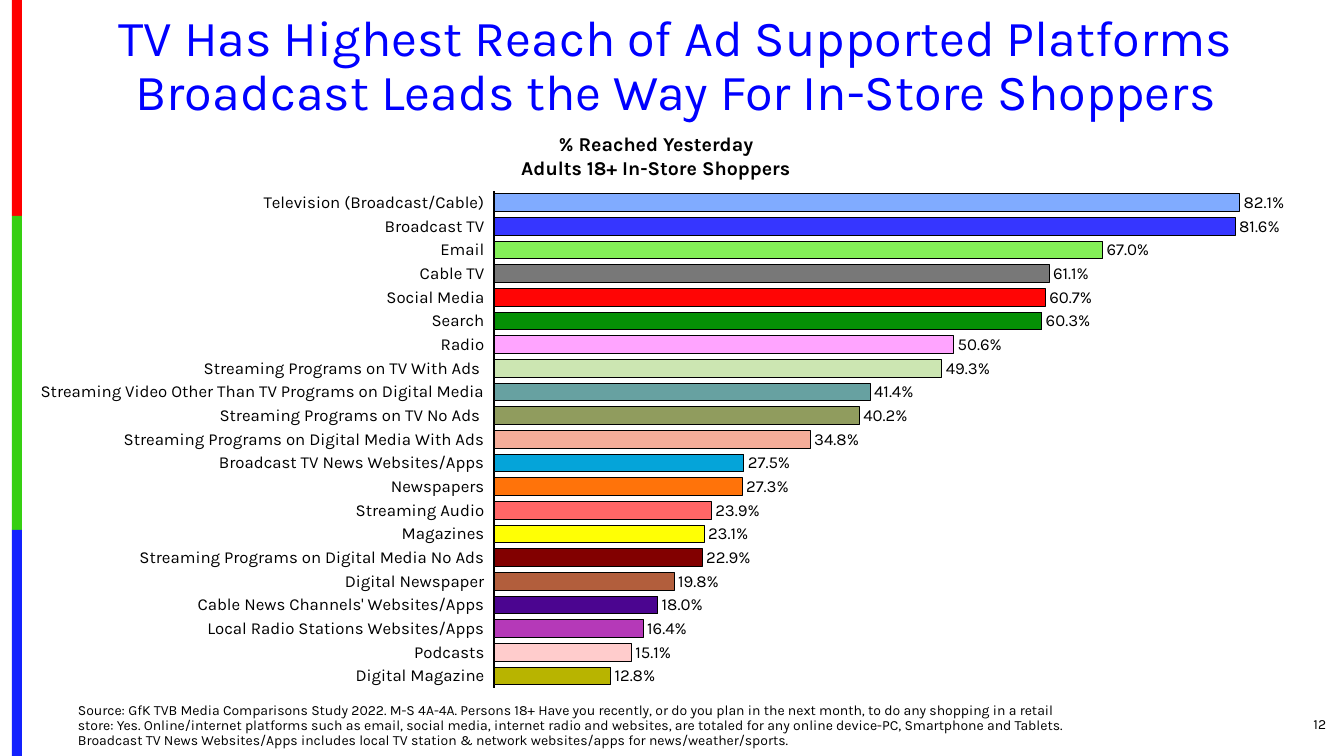
from pptx import Presentation
from pptx.chart.data import CategoryChartData
from pptx.dml.color import RGBColor
from pptx.enum.chart import XL_CHART_TYPE as ChartType, XL_LABEL_POSITION as LabelPos
from pptx.enum.chart import XL_TICK_LABEL_POSITION as TickLabelPos, XL_TICK_MARK as TickMark
from pptx.enum.shapes import MSO_SHAPE as Shape
from pptx.enum.text import MSO_ANCHOR as Anchor, PP_ALIGN as Align
from pptx.oxml import parse_xml
from pptx.oxml.ns import nsdecls
from pptx.util import Pt

PX = 914400 / 100.8
FONT = "Karla"
COLORS = {"title": "0000FF", "text": "000000", "page": "FFFFFF",
          "red": "FE0000", "green": "36CF12", "blue": "1322FE"}

STRIPES = [("red", 0, 216), ("green", 216, 530), ("blue", 530, 756)]

TITLE = ("TV Has Highest Reach of Ad Supported Platforms "
         "Broadcast Leads the Way For In-Store Shoppers")
SOURCE = ("Source: GfK TVB Media Comparisons Study 2022. M-S 4A-4A. Persons 18+ Have you "
          "recently, or do you plan in the next month, to do any shopping in a retail store: "
          "Yes. Online/internet platforms such as email, social media, internet radio and "
          "websites, are totaled for any online device-PC, Smartphone and Tablets. Broadcast "
          "TV News Websites/Apps includes local TV station & network websites/apps for "
          "news/weather/sports.")

PLATFORMS = [
    ("Television (Broadcast/Cable)", 0.821, "80ABFF"),
    ("Broadcast TV", 0.816, "3636FF"),
    ("Email", 0.67, "84F058"),
    ("Cable TV", 0.611, "787878"),
    ("Social Media", 0.607, "FF0505"),
    ("Search", 0.603, "059005"),
    ("Radio", 0.506, "FFA4FF"),
    ("Streaming Programs on TV With Ads ", 0.493, "CCE6B2"),
    ("Streaming Video Other Than TV Programs on Digital Media", 0.414, "67A1A1"),
    ("Streaming Programs on TV No Ads ", 0.402, "909C5E"),
    ("Streaming Programs on Digital Media With Ads", 0.348, "F5AD99"),
    ("Broadcast TV News Websites/Apps", 0.275, "05A4D9"),
    ("Newspapers", 0.273, "FF730A"),
    ("Streaming Audio", 0.239, "FF6666"),
    ("Magazines", 0.231, "FFFF05"),
    ("Streaming Programs on Digital Media No Ads", 0.229, "820000"),
    ("Digital Newspaper", 0.198, "B25E3C"),
    ("Cable News Channels' Websites/Apps", 0.18, "4B0590"),
    ("Local Radio Stations Websites/Apps", 0.164, "B539B8"),
    ("Podcasts", 0.151, "FFCCCC"),
    ("Digital Magazine", 0.128, "B8B400"),
]
PLOT_AREA = {"x": 0.369, "y": 0.053, "w": 0.62, "h": 0.946}


def emu(*lengths):
    return [round(length * PX) for length in lengths]


def rgb(name):
    return RGBColor.from_string(COLORS[name])


def apply(target, formats):
    for name, value in formats.items():
        setattr(target, name, value)


def style_font(font, size, color="text", bold=False):
    apply(font, {"name": FONT, "size": Pt(size), "bold": bold})
    font.color.rgb = rgb(color)


def add_stripe(slide, color, top, bottom):
    stripe = slide.shapes.add_shape(Shape.RECTANGLE, *emu(12, top, 10, bottom - top))
    stripe.shadow.inherit = False
    stripe.fill.solid()
    stripe.fill.fore_color.rgb = rgb(color)
    stripe.line.fill.background()


def add_text(slide, box, lines, size, align=Align.LEFT, anchor=Anchor.TOP,
             spacing=1.0, **font_style):
    frame = slide.shapes.add_textbox(*emu(*box)).text_frame
    apply(frame, {"word_wrap": True, "vertical_anchor": anchor, "text": "\n".join(lines)})
    for paragraph in frame.paragraphs:
        apply(paragraph, {"alignment": align, "line_spacing": spacing})
        for run in paragraph.runs:
            style_font(run.font, size, **font_style)


def set_plot_area(chart):
    """Pin the inner plot area to fixed fractions of the chart."""
    edges = "".join(f'<c:{key} val="{value}"/>' for key, value in PLOT_AREA.items())
    layout = parse_xml(
        f'<c:layout {nsdecls("c")}><c:manualLayout><c:layoutTarget val="inner"/>'
        f'<c:xMode val="edge"/><c:yMode val="edge"/>{edges}</c:manualLayout></c:layout>')
    plot_area = chart.element.xpath("c:chart/c:plotArea")[0]
    for default in plot_area.xpath("c:layout"):
        plot_area.remove(default)
    plot_area.insert(0, layout)


def style_axes(chart):
    categories, reach = chart.category_axis, chart.value_axis
    apply(categories, {"reverse_order": True, "has_major_gridlines": False,
                       "major_tick_mark": TickMark.NONE, "minor_tick_mark": TickMark.NONE,
                       "tick_label_position": TickLabelPos.LOW})
    style_font(categories.tick_labels.font, 12)
    categories.format.line.color.rgb = rgb("text")
    categories.format.line.width = Pt(1.5)
    apply(reach, {"visible": False, "has_major_gridlines": False,
                  "minimum_scale": 0, "maximum_scale": 0.9})


def style_bars(plot):
    apply(plot, {"gap_width": 34, "vary_by_categories": False, "has_data_labels": True})
    labels = plot.data_labels
    apply(labels, {"show_value": True, "number_format": "0.0%",
                   "number_format_is_linked": False, "position": LabelPos.OUTSIDE_END})
    style_font(labels.font, 12)
    for index, (_, _, color) in enumerate(PLATFORMS):
        bar = plot.series[0].points[index].format
        bar.fill.solid()
        bar.fill.fore_color.rgb = RGBColor.from_string(color)
        bar.line.color.rgb = rgb("text")
        bar.line.width = Pt(0.75)


def add_reach_chart(slide, box):
    data = CategoryChartData(number_format="0.0%")
    data.categories = [platform for platform, _, _ in PLATFORMS]
    data.add_series("Series 1", [reach for _, reach, _ in PLATFORMS])
    chart = slide.shapes.add_chart(ChartType.BAR_CLUSTERED, *emu(*box), data).chart
    apply(chart, {"has_legend": False, "has_title": False})
    style_font(chart.font, 10)
    set_plot_area(chart)
    style_axes(chart)
    style_bars(chart.plots[0])


def main():
    deck = Presentation()
    deck.slide_width, deck.slide_height = emu(1344, 756)
    slide = deck.slides.add_slide(deck.slide_layouts[6])
    slide.background.fill.solid()
    slide.background.fill.fore_color.rgb = rgb("page")

    for stripe in STRIPES:
        add_stripe(slide, *stripe)
    add_text(slide, (50, 8, 1252, 120), [TITLE], 36, Align.CENTER, spacing=0.9, color="title")
    add_text(slide, (1227, 704, 109, 40), ["12"], 10, Align.RIGHT, Anchor.MIDDLE)
    add_text(slide, (68, 698, 1033, 56), [SOURCE], 10, anchor=Anchor.BOTTOM, spacing=0.9)
    add_text(slide, (320, 127, 672, 57), ["% Reached Yesterday", "Adults 18+ In-Store Shoppers"],
             14, Align.CENTER, bold=True)
    add_reach_chart(slide, (8, 163, 1318, 526))
    deck.save("out.pptx")


if __name__ == "__main__":
    main()
